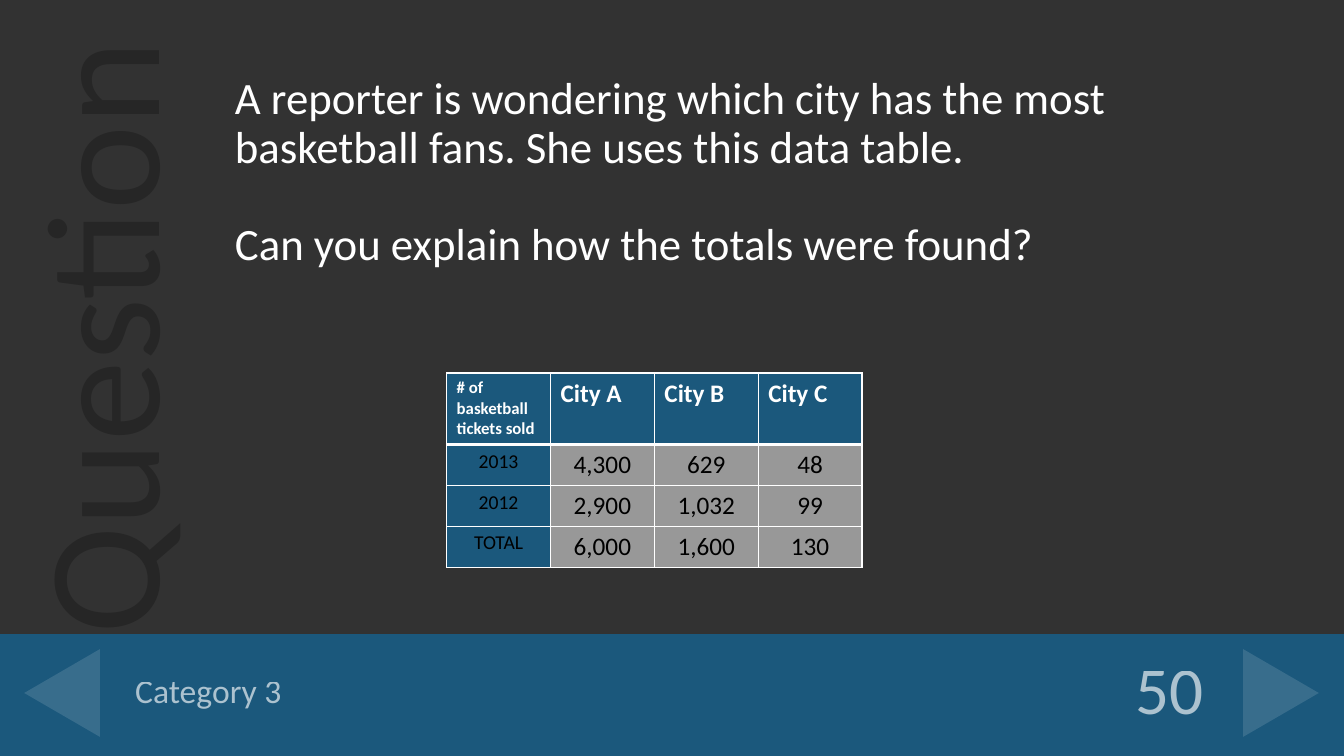
"""Build a quiz question slide with a table of basketball ticket sales."""
from lxml import etree
from pptx import Presentation
from pptx.dml.color import RGBColor
from pptx.enum import shapes, text
from pptx.oxml.ns import qn
from pptx.util import Inches, Pt

COLORS = {"back": "323232", "ghost": "262626", "blue": "1B587C",
          "white": "FFFFFF", "black": "000000", "gray": "989898"}
FONT = "Calibri"
QUESTION = ["A reporter is wondering which city has the most basketball fans. "
            "She uses this data table.",
            "Can you explain how the totals were found?"]
SIDE_WORD, CATEGORY, POINTS = "Question", "Category 3", "50"
SALES = [["# of basketball tickets sold", "City A", "City B", "City C"],
         ["2013", "4,300", "629", "48"],
         ["2012", "2,900", "1,032", "99"],
         ["TOTAL", "6,000", "1,600", "130"]]
WIDTH, HEIGHT, BAR_TOP = 13.33, 7.5, 6.29
ARROWS = [(0.18, 270), (12.27, 90)]
TABLE_LEFT, TABLE_TOP, COLUMN_WIDTH = 4.43, 3.7, 1.03
ROW_HEIGHTS = [0.7, 0.4, 0.4, 0.4]
LEFT, CENTER, RIGHT = (text.PP_ALIGN.LEFT, text.PP_ALIGN.CENTER,
                       text.PP_ALIGN.RIGHT)


def rgb(name):
    return RGBColor.from_string(COLORS[name])


def set_alpha(element, percent):
    for color in element.iter(qn("a:srgbClr")):
        etree.SubElement(color, qn("a:alpha")).set("val", str(percent * 1000))


def write(para, words, size, color, align=LEFT, bold=False, **spacing):
    span = para.add_run()
    span.text = words
    span.font.color.rgb = rgb(color)
    for name, value in {"name": FONT, "size": Pt(size), "bold": bold}.items():
        setattr(span.font, name, value)
    for name, value in {"alignment": align, **spacing}.items():
        setattr(para, name, value)


def place(box, left, top, width, height):
    bounds = {"left": left, "top": top, "width": width, "height": height}
    for name, value in bounds.items():
        setattr(box, name, Inches(value))


def add_block(page, kind, bounds, color):
    block = page.shapes.add_shape(kind, *map(Inches, bounds))
    block.shadow.inherit = False
    block.fill.solid()
    block.fill.fore_color.rgb = rgb(color)
    block.line.fill.background()
    return block


def add_backdrop(page):
    side = page.shapes.add_textbox(*map(Inches, (-2.2, 2.18, BAR_TOP, 1.94)))
    side.rotation = 270
    frame = side.text_frame
    settings = {"word_wrap": True, "vertical_anchor": text.MSO_ANCHOR.MIDDLE,
                "margin_left": 0, "margin_right": 0,
                "margin_top": 0, "margin_bottom": 0}
    for name, value in settings.items():
        setattr(frame, name, value)
    write(frame.paragraphs[0], SIDE_WORD, 115, "ghost")
    add_block(page, shapes.MSO_SHAPE.RECTANGLE,
              (0, BAR_TOP, WIDTH, HEIGHT - BAR_TOP), "blue")
    for left, angle in ARROWS:
        arrow = add_block(page, shapes.MSO_SHAPE.ISOSCELES_TRIANGLE,
                          (left, 6.5, 0.87, 0.75), "white")
        arrow.rotation = angle
        set_alpha(arrow.fill._xPr, 13)


def fill_placeholder(page, box, bounds, lines, size, align=LEFT, gap=0):
    page.shapes._spTree.append(box._element)
    place(box, *bounds)
    frame = box.text_frame
    settings = {"word_wrap": True, "auto_size": text.MSO_AUTO_SIZE.NONE,
                "vertical_anchor": text.MSO_ANCHOR.MIDDLE}
    for name, value in settings.items():
        setattr(frame, name, value)
    for index, line in enumerate(lines):
        para = frame.add_paragraph() if index else frame.paragraphs[0]
        write(para, line, size, "white", align, line_spacing=0.9,
              space_before=Pt(gap if index else 0), space_after=Pt(0))
        properties = para._p.get_or_add_pPr()
        properties.set("marL", "0")
        properties.set("indent", "0")
        etree.SubElement(properties, qn("a:buNone"))
    return frame


def set_borders(cell, widths):
    properties = cell._tc.get_or_add_tcPr()
    for index, (side, width) in enumerate(widths.items()):
        line = etree.Element(qn(f"a:ln{side}"), w=str(Pt(width)))
        solid = etree.SubElement(line, qn("a:solidFill"))
        etree.SubElement(solid, qn("a:srgbClr"), val=COLORS["white"])
        properties.insert(index, line)


def add_sales_table(page):
    columns = len(SALES[0])
    table = page.shapes.add_table(
        len(SALES), columns, Inches(TABLE_LEFT), Inches(TABLE_TOP),
        Inches(COLUMN_WIDTH * columns), Inches(sum(ROW_HEIGHTS))).table
    for column in table.columns:
        column.width = Inches(COLUMN_WIDTH)
    for row, values in enumerate(SALES):
        table.rows[row].height = Inches(ROW_HEIGHTS[row])
        header = row == 0
        for column, value in enumerate(values):
            cell = table.cell(row, column)
            label = column == 0
            cell.fill.solid()
            cell.fill.fore_color.rgb = rgb("blue" if header or label else "gray")
            size = (12 if header else 14) if label else 18
            write(cell.text_frame.paragraphs[0], value, size,
                  "white" if header else "black",
                  LEFT if header else CENTER, header)
            set_borders(cell, {"L": 1, "R": 1, "T": 3 if row == 1 else 1,
                               "B": 3 if header else 1})


def main():
    deck = Presentation()
    deck.slide_width, deck.slide_height = Inches(WIDTH), Inches(HEIGHT)
    page = deck.slides.add_slide(deck.slide_layouts[3])
    page.background.fill.solid()
    page.background.fill.fore_color.rgb = rgb("back")
    title, question, points = page.placeholders
    add_backdrop(page)
    frame = fill_placeholder(page, question, (2.23, 0.17, 9.72, 4.06),
                             QUESTION, 32, gap=35)
    frame.margin_bottom = Inches(1.01)
    fill_placeholder(page, points, (9.96, 6.45, 2.08, 0.85), [POINTS], 48, RIGHT)
    fill_placeholder(page, title, (1.24, 6.45, 8.72, 0.85), [CATEGORY], 24)
    for box in (points, title):
        set_alpha(box._element, 63)
    add_sales_table(page)
    deck.save("out.pptx")


if __name__ == "__main__":
    main()
